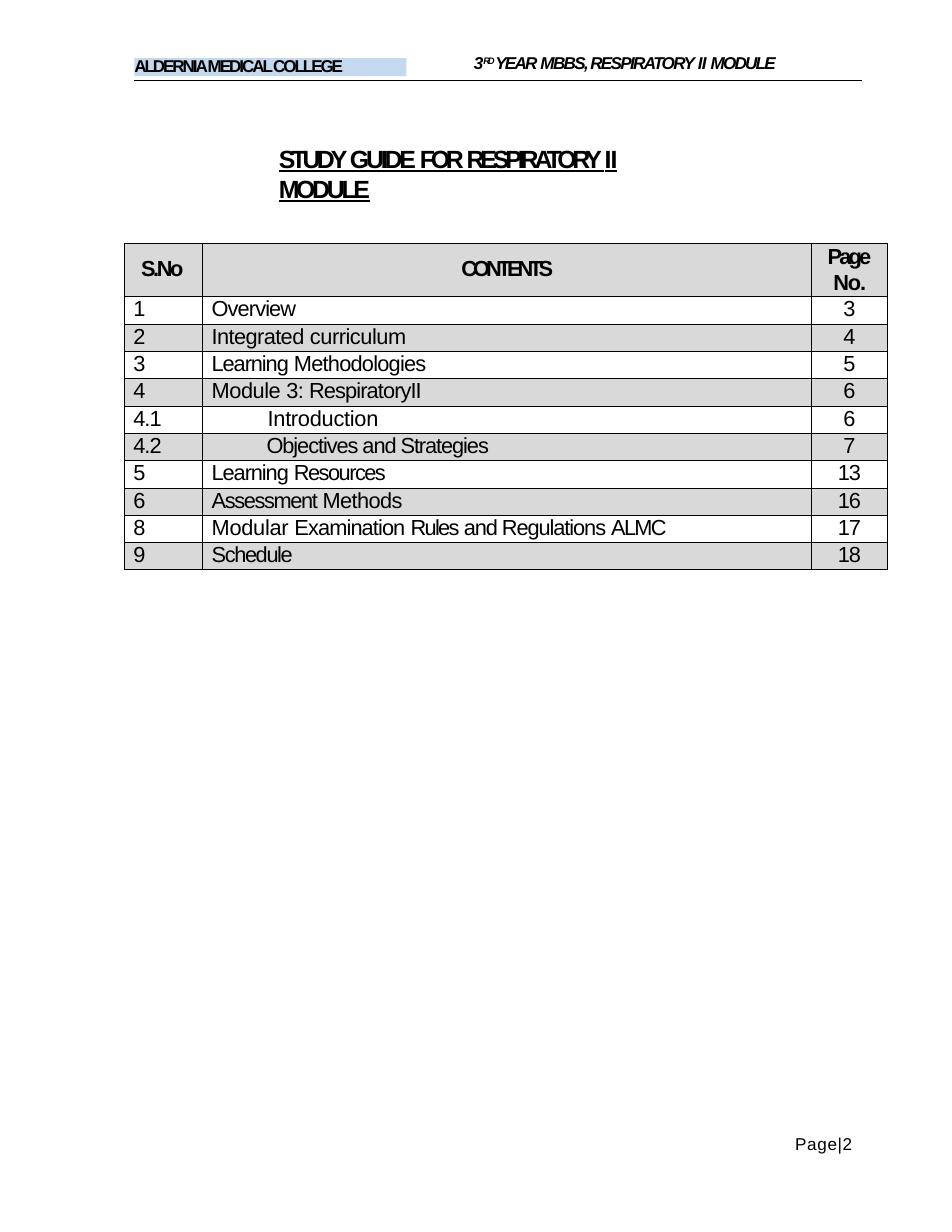
from lxml import etree
from pptx import Presentation
from pptx.dml.color import RGBColor
from pptx.enum.shapes import MSO_CONNECTOR, MSO_SHAPE
from pptx.enum.text import MSO_ANCHOR, PP_ALIGN
from pptx.oxml.ns import qn
from pptx.util import Inches, Pt

LEFT, CENTER = PP_ALIGN.LEFT, PP_ALIGN.CENTER
TOP = MSO_ANCHOR.TOP
RECTANGLE = MSO_SHAPE.RECTANGLE
STRAIGHT = MSO_CONNECTOR.STRAIGHT

# The page is a grid of 85 columns by 110 rows
COLUMNS, ROWS = 85, 110
CELL = Inches(0.1)
BLACK, GREY, BLUE = "000000", "D9D9D9", "C5D9EE"
COLUMN_WIDTHS = (7, 54.3, 6.8)
HEADER_HEIGHT, ROW_HEIGHT = 4.8, 2.44
BORDER_WIDTH = Pt(0.5)

HEADER_STYLE = {"size": Pt(11), "bold": True}
MODULE_STYLE = {**HEADER_STYLE, "italic": True}
TITLE_STYLE = {"size": Pt(16), "bold": True, "underline": True}
PAGE_STYLE = {"size": Pt(11)}
HEAD_STYLE = {"size": Pt(14), "bold": True}
BODY_STYLE = {"size": Pt(14)}

# Runs are (text, letter spacing in points)
TITLE = [("STUDY ", -2.5), ("GUIDE ", -2), ("FOR ", -2.7),
         ("RESPIRATORY ", -2.6), ("II", -0.5), (" ", -1.1), ("MODULE", -2.1)]

# Number, its spacing, indent in columns, content runs, page, its spacing
CONTENTS = [
    ("1", 0, 0.8, [("Overview", -0.6)], "3", 0),
    ("2", 0, 0.8, [("Integrated ", -0.4), ("curriculum", -0.3)], "4", 0),
    ("3", 0, 0.8, [("Learning ", -0.7), ("Methodologies", -0.5)], "5", 0),
    ("4", 0, 0.8, [("Module ", -0.3), ("3: ", -0.5), ("RespiratoryII", -0.6)], "6", 0),
    ("4.1", -0.6, 5.8, [("Introduction", -0.2)], "6", 0),
    ("4.2", -0.6, 5.7, [("Objectives and Strategies", -0.7)], "7", 0),
    ("5", 0, 0.8, [("Learning ", -0.7), ("Resources", -1)], "13", -0.8),
    ("6", 0, 0.8, [("Assessment ", -0.9), ("Methods", -0.4)], "16", -0.8),
    ("8", 0, 0.8, [("Modular ", -0.2), ("Examination ", -0.6), ("Rules ", -1.1),
                   ("and Regulations ", -0.7), ("ALMC", -1.1)], "17", -0.8),
    ("9", 0, 0.8, [("Schedule", -0.9)], "18", -0.8),
]


def grid(*lengths):
    return [int(length * CELL) for length in lengths]


def color(value):
    return RGBColor.from_string(value)


def add_runs(paragraph, runs, style):
    for text, spacing in runs:
        run = paragraph.add_run()
        run.text = text
        run.font.name = "Arial"
        run.font.color.rgb = color(BLACK)
        for name, value in style.items():
            setattr(run.font, name, value)
        run.font._element.set("spc", str(round(spacing * 100)))


def write(paragraph, runs, style, indent=0, **layout):
    """Fill a paragraph; layout holds alignment and spacing values."""
    paragraph.alignment = LEFT
    for name, value in layout.items():
        setattr(paragraph, name, value)
    paragraph._p.get_or_add_pPr().set("marL", str(grid(indent)[0]))
    add_runs(paragraph, runs, style)


def prepare_frame(shape, top_inset=0):
    frame = shape.text_frame
    settings = {"word_wrap": True, "vertical_anchor": TOP, "margin_left": 0,
                "margin_right": 0, "margin_bottom": 0,
                "margin_top": grid(top_inset)[0]}
    for name, value in settings.items():
        setattr(frame, name, value)
    return frame.paragraphs[0]


def add_text(slide, box, runs, style, top_inset=0, **layout):
    paragraph = prepare_frame(slide.shapes.add_textbox(*grid(*box)), top_inset)
    write(paragraph, runs, style, indent=0.1, **layout)
    return paragraph


def add_banner(slide, box, runs, style):
    shape = slide.shapes.add_shape(RECTANGLE, *grid(*box))
    shape.shadow.inherit = False
    shape.fill.solid()
    shape.fill.fore_color.rgb = color(BLUE)
    shape.line.fill.background()
    write(prepare_frame(shape), runs, style, line_spacing=Pt(11.4))


def add_rule(slide, *ends):
    line = slide.shapes.add_connector(STRAIGHT, *grid(*ends))
    line.line.color.rgb = color(BLACK)
    line.line.width = Pt(0.75)
    etree.SubElement(line._element.spPr, qn("a:effectLst"))


def format_cell(cell, shaded, top_inset=0):
    cell.margin_left = cell.margin_right = cell.margin_bottom = 0
    cell.margin_top = grid(top_inset)[0]
    cell.vertical_anchor = TOP
    properties = cell._tc.get_or_add_tcPr()
    for side in ("lnL", "lnR", "lnT", "lnB"):
        border = etree.SubElement(properties, qn(f"a:{side}"), w=str(BORDER_WIDTH))
        fill = etree.SubElement(border, qn("a:solidFill"))
        etree.SubElement(fill, qn("a:srgbClr"), val=BLACK)
    if shaded:
        cell.fill.solid()
        cell.fill.fore_color.rgb = color(GREY)
    else:
        cell.fill.background()
    return cell.text_frame.paragraphs[0]


def add_contents_table(slide, left, top):
    height = HEADER_HEIGHT + ROW_HEIGHT * len(CONTENTS)
    table = slide.shapes.add_table(
        len(CONTENTS) + 1, len(COLUMN_WIDTHS),
        *grid(left, top, sum(COLUMN_WIDTHS), height)).table
    table.first_row = table.horz_banding = False
    for column, width in zip(table.columns, grid(*COLUMN_WIDTHS)):
        column.width = width
    for index, row in enumerate(table.rows):
        row.height = grid(ROW_HEIGHT if index else HEADER_HEIGHT)[0]

    # Heading row
    number, title, page = table.rows[0].cells
    write(format_cell(number, True, 1.2), [("S.No", -1.6)], HEAD_STYLE, 1.5,
          space_before=Pt(8.8))
    write(format_cell(title, True, 1.2), [("CONTENTS", -2.6)], HEAD_STYLE, 0.1,
          alignment=CENTER, space_before=Pt(8.4))
    write(format_cell(page, True), [("Page", -1.8)], HEAD_STYLE, 1.5,
          line_spacing=Pt(16.5))
    write(page.text_frame.add_paragraph(), [("No.", -0.7)], HEAD_STYLE, 2,
          line_spacing=Pt(16.5), space_before=Pt(0.7))

    # Body rows, every second one shaded
    for index, entry in enumerate(CONTENTS, start=1):
        number, number_spacing, indent, runs, page, page_spacing = entry
        columns = (([(number, number_spacing)], 0.8, LEFT),
                   (runs, indent, LEFT),
                   ([(page, page_spacing)], 0.1, CENTER))
        for cell, (texts, margin, alignment) in zip(table.rows[index].cells, columns):
            write(format_cell(cell, index % 2 == 0), texts, BODY_STYLE, margin,
                  alignment=alignment, line_spacing=Pt(16))


def main():
    presentation = Presentation()
    presentation.slide_width, presentation.slide_height = grid(COLUMNS, ROWS)
    slide = presentation.slides.add_slide(presentation.slide_layouts[6])

    # Page header
    add_rule(slide, 12, 7.2, 77, 7.2)
    module = add_text(slide, (42.2, 4.6, 34.8, 2), [("3", -0.9), ("RD ", -1.4)],
                      MODULE_STYLE, 0.1, space_before=Pt(1))
    ordinal = module.runs[1].font
    ordinal.size = Pt(10.5)
    ordinal._element.set("baseline", "32000")
    add_runs(module, [("YEAR ", -1.2), ("MBBS, RESPIRATORY ", -1.1),
                      ("II ", -0.5), ("MODULE", -1.2)], MODULE_STYLE)
    add_banner(slide, (12, 5.2, 24.3, 1.6),
               [("ALDERNIA MEDICAL COLLEGE", -1.4)], HEADER_STYLE)

    # Title and contents
    add_text(slide, (24.8, 12.7, 38.6, 2.9), TITLE, TITLE_STYLE, 0.1,
             space_before=Pt(0.9))
    add_contents_table(slide, 11.1, 21.7)

    # Page footer
    add_text(slide, (70.9, 101.2, 6.5, 2), [("Page|2", 0.4)], PAGE_STYLE)
    presentation.save("out.pptx")


if __name__ == "__main__":
    main()
